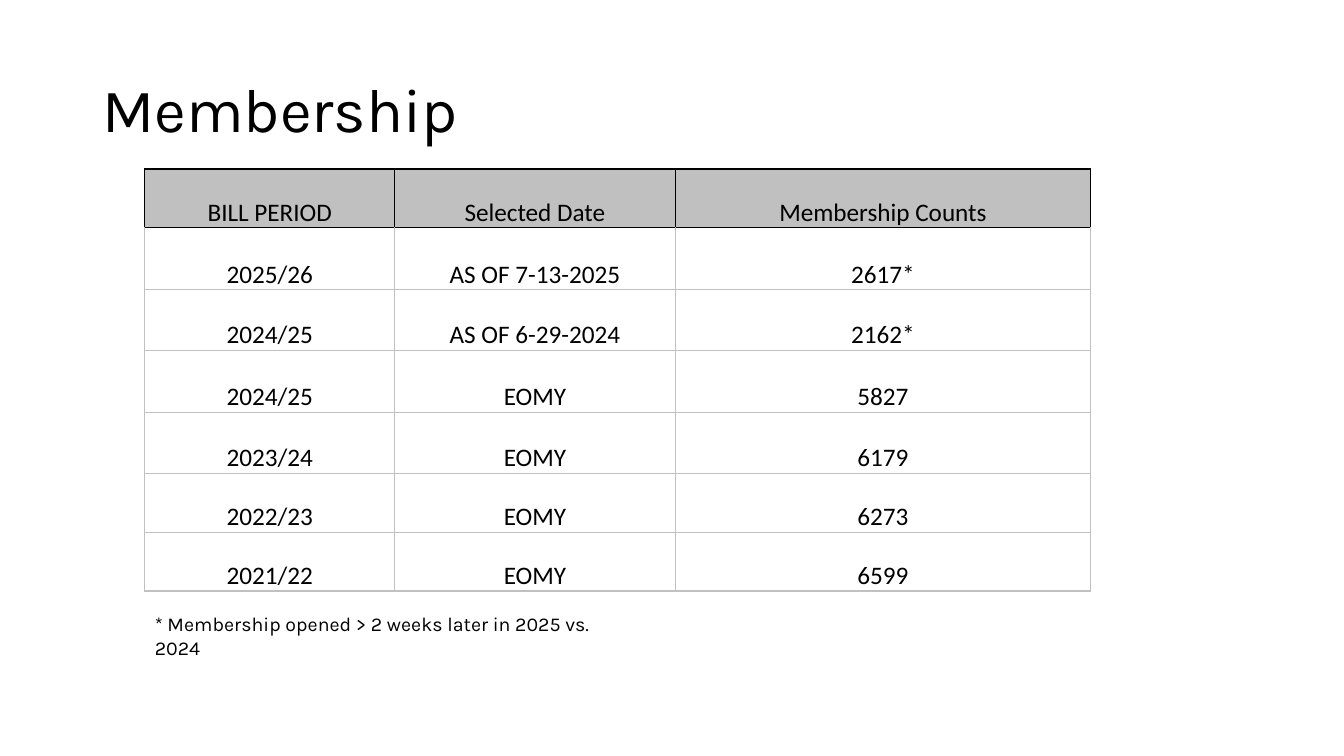
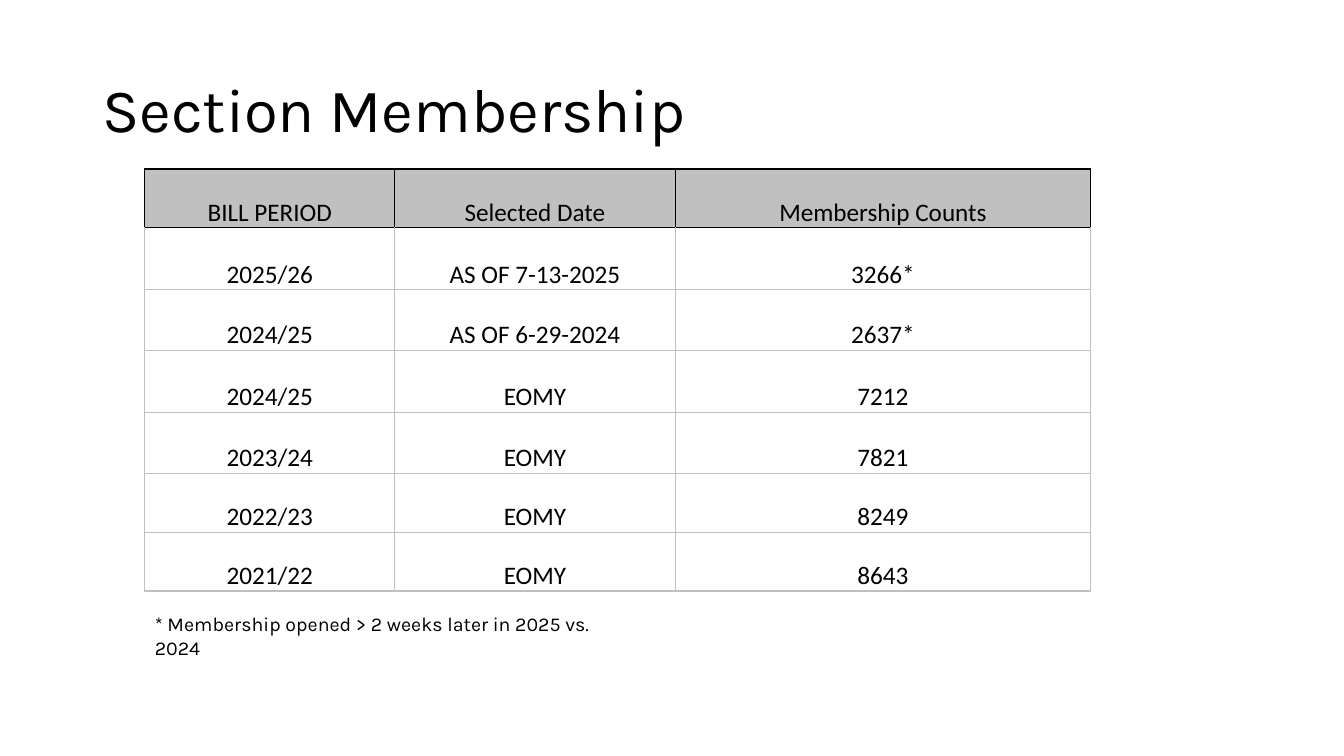
from collections import namedtuple
from dataclasses import dataclass

from lxml import etree
from pptx import Presentation
from pptx.dml.color import RGBColor
from pptx.enum.text import MSO_ANCHOR, MSO_AUTO_SIZE, PP_ALIGN
from pptx.oxml.ns import qn
from pptx.util import Pt

PX = 9525
TOP, MIDDLE, BOTTOM = MSO_ANCHOR.TOP, MSO_ANCHOR.MIDDLE, MSO_ANCHOR.BOTTOM
FIXED, GROW = MSO_AUTO_SIZE.NONE, MSO_AUTO_SIZE.SHAPE_TO_FIT_TEXT
LEFT, CENTER = PP_ALIGN.LEFT, PP_ALIGN.CENTER

Box = namedtuple("Box", "left top width height")


@dataclass(frozen=True)
class Theme:
    """Colours, fonts and type sizes shared by the slides."""
    ink: str = "000000"
    grey: str = "C0C0C0"
    text_font: str = "Karla"
    table_font: str = "Calibri"
    title_size: int = 44
    table_size: int = 18
    note_size: int = 14
    border_width: int = 1


THEME = Theme()
SLIDE_SIZE = (1280, 720)
TITLE_BOX = Box(88, 38, 1104, 139)
TABLE_BOX = Box(138, 161, 901, 402)
NOTE_BOX = Box(138, 578, 454, 33)
COLUMN_WIDTHS = (238, 267, 396)
ROW_HEIGHTS = (56, 59, 58, 59, 58, 56, 56)

HEADER = ("BILL PERIOD", "Selected Date", "Membership Counts")
PERIODS = (
    ("2025/26", "AS OF 7-13-2025"),
    ("2024/25", "AS OF 6-29-2024"),
    ("2024/25", "EOMY"),
    ("2023/24", "EOMY"),
    ("2022/23", "EOMY"),
    ("2021/22", "EOMY"),
)
NOTE = "* Membership opened > 2 weeks later in 2025 vs. 2024"
PAGES = (
    ("Membership", ("2617*", "2162*", "5827", "6179", "6273", "6599")),
    ("Section Membership", ("3266*", "2637*", "7212", "7821", "8249", "8643")),
)


def apply(target, **values):
    """Set each named format value on the target."""
    for name, value in values.items():
        setattr(target, name, value)


def scaled(box):
    """Turn the px lengths of a box into EMU."""
    return [length * PX for length in box]


def write(frame, text, font, size, align=LEFT, line_spacing=None):
    """Write one formatted paragraph into a text frame."""
    para = frame.paragraphs[0]
    apply(para, alignment=align, line_spacing=line_spacing)
    span = para.add_run()
    span.text = text
    apply(span.font, name=font, size=Pt(size), bold=False)
    span.font.color.rgb = RGBColor.from_string(THEME.ink)


def add_text(page, box, text, size, anchor=TOP, auto_size=FIXED, line_spacing=None):
    """Place a wrapped text box in the text font."""
    frame = page.shapes.add_textbox(*scaled(box)).text_frame
    apply(frame, word_wrap=True, vertical_anchor=anchor, auto_size=auto_size)
    write(frame, text, THEME.text_font, size, line_spacing=line_spacing)


def add_borders(cell, colors):
    """Draw the left, right, top and bottom borders of a cell."""
    properties = cell._tc.get_or_add_tcPr()
    for side, color in zip("LRTB", colors):
        line = etree.SubElement(properties, qn(f"a:ln{side}"), w=str(Pt(THEME.border_width)))
        fill = etree.SubElement(line, qn("a:solidFill"))
        etree.SubElement(fill, qn("a:srgbClr"), val=color)


def format_cell(cell, text, row):
    """Fill, border and write one cell according to its row."""
    side_color = THEME.grey if row else THEME.ink
    top_color = THEME.ink if row <= 1 else THEME.grey
    add_borders(cell, (side_color, side_color, top_color, side_color))
    if row:
        cell.fill.background()
    else:
        cell.fill.solid()
        cell.fill.fore_color.rgb = RGBColor.from_string(THEME.grey)
    apply(cell, vertical_anchor=BOTTOM, margin_left=7 * PX, margin_right=7 * PX,
          margin_top=0, margin_bottom=0)
    write(cell.text_frame, text, THEME.table_font, THEME.table_size, CENTER)


def add_counts_table(page, box, counts):
    """Place the table of membership counts by bill period."""
    rows = [HEADER] + [(*period, count) for period, count in zip(PERIODS, counts)]
    table = page.shapes.add_table(len(rows), len(HEADER), *scaled(box)).table
    apply(table, first_row=False, horz_banding=False)
    for column, width in zip(table.columns, COLUMN_WIDTHS):
        column.width = width * PX
    for row, height in zip(table.rows, ROW_HEIGHTS):
        row.height = height * PX
    for row, texts in enumerate(rows):
        for column, text in enumerate(texts):
            format_cell(table.cell(row, column), text, row)


def add_membership_page(deck, title, counts):
    """Add a slide with a title, a counts table and a footnote."""
    page = deck.slides.add_slide(deck.slide_layouts[6])
    add_text(page, TITLE_BOX, title, THEME.title_size, anchor=MIDDLE, line_spacing=0.9)
    add_counts_table(page, TABLE_BOX, counts)
    add_text(page, NOTE_BOX, NOTE, THEME.note_size, auto_size=GROW)


def main():
    """Build and save the deck."""
    deck = Presentation()
    deck.slide_width, deck.slide_height = scaled(SLIDE_SIZE)
    for title, counts in PAGES:
        add_membership_page(deck, title, counts)
    deck.save("out.pptx")


if __name__ == "__main__":
    main()
